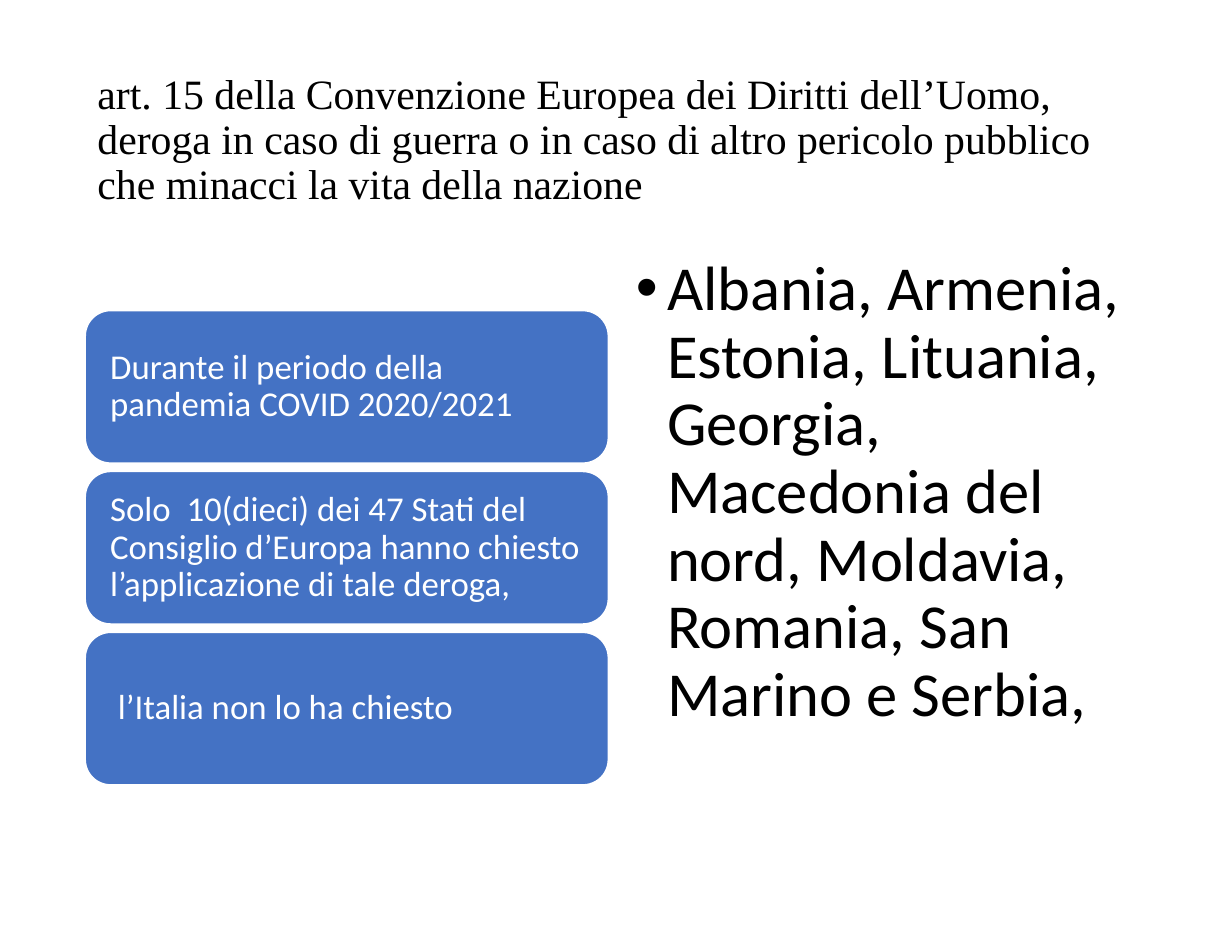
from lxml import etree
from pptx import Presentation
from pptx.dml.color import RGBColor
from pptx.enum.shapes import MSO_SHAPE
from pptx.enum.text import MSO_ANCHOR, PP_ALIGN
from pptx.oxml.ns import qn
from pptx.util import Emu, Pt

ROUNDED = MSO_SHAPE.ROUNDED_RECTANGLE
TOP, MIDDLE = MSO_ANCHOR.TOP, MSO_ANCHOR.MIDDLE
LEFT = PP_ALIGN.LEFT
EMU_PER_PX = 9144
BLACK, WHITE, BLUE = "000000", "FFFFFF", "4472C4"

TITLE = (
    "art. 15 della Convenzione Europea dei Diritti dell’Uomo, deroga in caso di "
    "guerra o in caso di altro pericolo pubblico che minacci la vita della nazione"
)
CARDS = [
    "Durante il periodo della pandemia COVID 2020/2021",
    "Solo  10(dieci) dei 47 Stati del Consiglio d’Europa hanno chiesto "
    "l’applicazione di tale deroga,",
    " l’Italia non lo ha chiesto",
]
COUNTRIES = (
    "Albania, Armenia, Estonia, Lituania, Georgia, Macedonia del nord, "
    "Moldavia, Romania, San Marino e Serbia,"
)


def px(length):
    return Emu(round(length * EMU_PER_PX))


def color(value):
    return RGBColor.from_string(value)


def write_text(shape, text, size, font="Calibri", fill=BLACK, anchor=TOP,
               margins=(10, 5), space_before=0):
    frame = shape.text_frame
    frame.word_wrap = True
    frame.vertical_anchor = anchor
    frame.margin_left = frame.margin_right = px(margins[0])
    frame.margin_top = frame.margin_bottom = px(margins[1])
    paragraph = frame.paragraphs[0]
    paragraph.alignment = LEFT
    paragraph.line_spacing = 0.9
    paragraph.space_before = Pt(space_before)
    run = paragraph.add_run()
    run.text = text
    run.font.name = font
    run.font.size = Pt(size)
    run.font.color.rgb = color(fill)
    return paragraph


def add_bullet(paragraph, indent):
    properties = paragraph._p.get_or_add_pPr()
    properties.set("marL", str(px(indent)))
    properties.set("indent", str(-px(indent)))
    etree.SubElement(properties, qn("a:buFont")).set("typeface", "Arial")
    etree.SubElement(properties, qn("a:buChar")).set("char", "•")


def add_title(slide, box):
    shape = slide.shapes.add_textbox(*map(px, box))
    write_text(shape, TITLE, 24, font="Times New Roman", anchor=MIDDLE)


def add_cards(slide, box, card_height):
    left, top, width, height = box
    step = (height - card_height) / (len(CARDS) - 1)
    for index, text in enumerate(CARDS):
        card = slide.shapes.add_shape(
            ROUNDED, px(left), px(top + index * step), px(width), px(card_height))
        card.shadow.inherit = False
        card.fill.solid()
        card.fill.fore_color.rgb = color(BLUE)
        card.line.color.rgb = color(WHITE)
        card.line.width = Pt(1)
        write_text(card, text, 20, fill=WHITE, anchor=MIDDLE, margins=(14, 14))


def add_countries(slide, box):
    shape = slide.shapes.add_textbox(*map(px, box))
    paragraph = write_text(shape, COUNTRIES, 36, space_before=9.8)
    add_bullet(paragraph, 25)


def main():
    presentation = Presentation()
    presentation.slide_width = px(984)
    presentation.slide_height = px(750)
    slide = presentation.slides.add_slide(presentation.slide_layouts[6])
    add_title(slide, (68, 40, 849, 145))
    add_cards(slide, (68, 248, 418, 379), 122)
    add_countries(slide, (498, 200, 418, 476))
    presentation.save("out.pptx")


if __name__ == "__main__":
    main()
